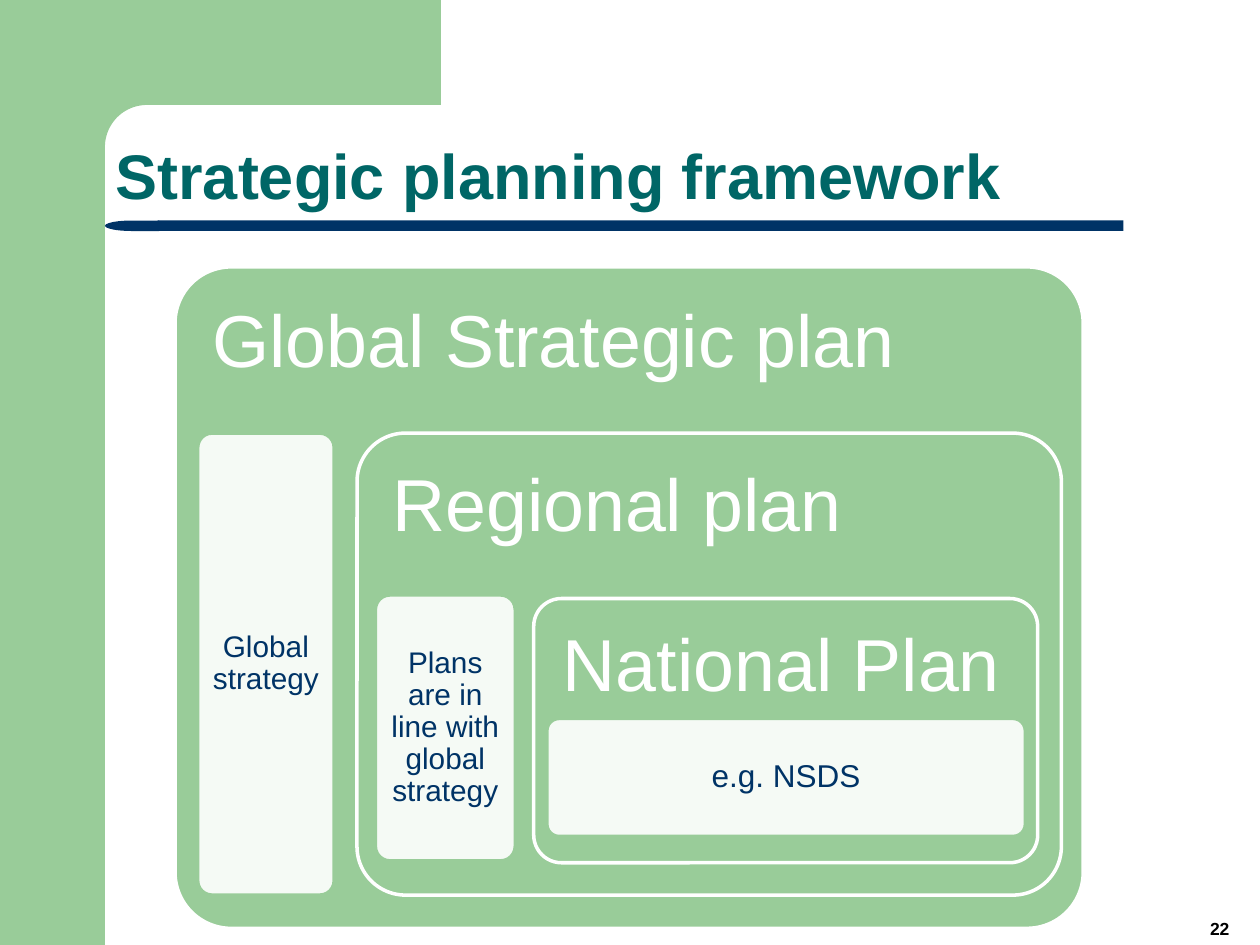
from math import cos, pi, sin

from lxml.etree import SubElement
from pptx import Presentation
from pptx.dml.color import RGBColor
from pptx.enum.shapes import MSO_SHAPE
from pptx.enum.text import MSO_ANCHOR, PP_ALIGN
from pptx.oxml.ns import qn
from pptx.util import Pt

GREEN = RGBColor(0x99, 0xCC, 0x99)
NAVY = RGBColor(0x00, 0x33, 0x66)
TEAL = RGBColor(0x00, 0x66, 0x66)
WHITE = RGBColor(0xFF, 0xFF, 0xFF)
BLACK = RGBColor(0x00, 0x00, 0x00)

PLANS = [
    ("Global Strategic plan", (100, 152.5, 519, 378), 0.085),
    ("Regional plan", (204, 247.5, 402.5, 264), 0.105),
    ("National Plan", (305, 342, 288, 151), 0.105),
]
DETAILS = [
    ("Global strategy", (113, 247.5, 78, 264), 17),
    ("Plans are in line with global strategy", (214.5, 340, 80, 152), 17),
    ("e.g. NSDS", (312.5, 410.5, 273.5, 67.5), 18),
]


def paint(shape, fill, line=None):
    """Give a shape a flat fill and an optional outline."""
    shape.shadow.inherit = False
    shape.fill.solid()
    shape.fill.fore_color.rgb = fill
    if line is None:
        shape.line.fill.background()
    else:
        shape.line.color.rgb = line
        shape.line.width = Pt(2)


def add_block(slide, kind, box, fill, line=None):
    """Add a painted preset shape at a box given in points."""
    block = slide.shapes.add_shape(kind, *map(Pt, box))
    paint(block, fill, line)
    return block


def write(shape, text, size, color, align, anchor, insets, bold=False, spacing=0.9):
    """Put one formatted paragraph into a shape."""
    frame = shape.text_frame
    frame.word_wrap = True
    frame.vertical_anchor = anchor
    frame.margin_left, frame.margin_top, frame.margin_right, frame.margin_bottom = map(Pt, insets)
    frame.text = text
    paragraph = frame.paragraphs[0]
    paragraph.alignment = align
    paragraph.line_spacing = spacing
    font = paragraph.font
    font.name, font.size, font.bold = "Arial", Pt(size), bold
    font.color.rgb = color


def add_corner(slide):
    """Draw the green side band and the top band with its rounded inner corner."""
    add_block(slide, MSO_SHAPE.RECTANGLE, (0, 0, 60, 540), GREEN)
    radius, steps = 24, 24
    angles = [pi / 2 * step / steps for step in range(steps + 1)]
    curve = [(84 - radius * sin(a), 84 - radius * cos(a)) for a in angles]
    outline = [(252, 60), *curve, (60, 92), (36, 92), (36, 0)]
    builder = slide.shapes.build_freeform(Pt(252), 0)
    builder.add_line_segments([(Pt(x), Pt(y)) for x, y in outline], close=True)
    paint(builder.convert_to_shape(), GREEN)


def add_title(slide):
    """Place the title and the navy rule beneath it."""
    add_block(slide, MSO_SHAPE.RECTANGLE, (90, 126, 552, 6), NAVY)
    tip = add_block(slide, MSO_SHAPE.FLOWCHART_DELAY, (60, 126, 31, 6), NAVY)
    tip.rotation = 180
    title = slide.shapes.title
    title.left, title.top, title.width, title.height = map(Pt, (60, 36, 624, 90))
    write(title, "Strategic planning framework", 36, TEAL, PP_ALIGN.LEFT,
          MSO_ANCHOR.BOTTOM, (6, 4, 6, 4), bold=True)


def add_plan(slide, name, box, corner):
    """Add one of the nested green plan frames."""
    plan = add_block(slide, MSO_SHAPE.ROUNDED_RECTANGLE, box, GREEN, WHITE)
    plan.adjustments[0] = corner
    write(plan, name, 42, WHITE, PP_ALIGN.LEFT, MSO_ANCHOR.TOP, (12, 12, 6, 12))


def add_detail(slide, text, box, size):
    """Add a translucent white card that explains a plan."""
    card = add_block(slide, MSO_SHAPE.ROUNDED_RECTANGLE, box, WHITE, GREEN)
    card.adjustments[0] = 0.105
    color = card.fill._xPr.find(qn("a:solidFill"))[0]
    SubElement(color, qn("a:alpha"), val="90000")
    write(card, text, size, NAVY, PP_ALIGN.CENTER, MSO_ANCHOR.MIDDLE, (5, 5, 5, 5))


def add_page_number(slide):
    """Put the page number in the bottom right corner."""
    number = slide.shapes.add_textbox(*map(Pt, (674, 516, 46, 24)))
    write(number, "22", 10, BLACK, PP_ALIGN.CENTER, MSO_ANCHOR.BOTTOM,
          (7.2, 3.6, 7.2, 3.6), bold=True, spacing=1.0)


def main():
    """Build and save the slide."""
    deck = Presentation()
    deck.slide_width, deck.slide_height = Pt(720), Pt(540)
    slide = deck.slides.add_slide(deck.slide_layouts[5])
    add_corner(slide)
    add_title(slide)
    add_page_number(slide)
    for plan, detail in zip(PLANS, DETAILS):
        add_plan(slide, *plan)
        add_detail(slide, *detail)
    deck.save("out.pptx")


if __name__ == "__main__":
    main()
